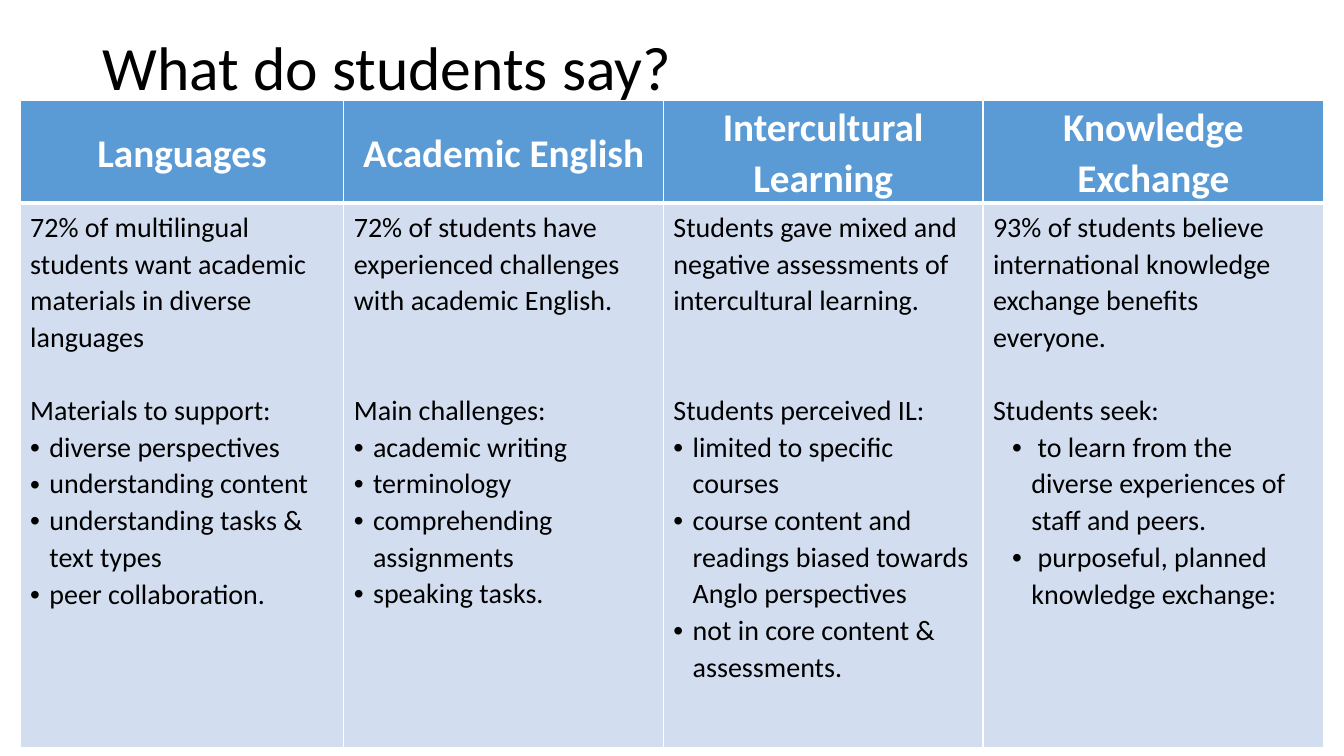
from lxml import etree
from pptx import Presentation
from pptx.dml.color import RGBColor
from pptx.enum.text import MSO_ANCHOR, MSO_AUTO_SIZE, PP_ALIGN
from pptx.oxml.ns import qn
from pptx.util import Inches, Pt

MIDDLE, TOP = MSO_ANCHOR.MIDDLE, MSO_ANCHOR.TOP
LEFT, CENTER = PP_ALIGN.LEFT, PP_ALIGN.CENTER
NO_AUTOFIT = MSO_AUTO_SIZE.NONE

FONT = "Calibri"
BLACK = RGBColor(0x00, 0x00, 0x00)
WHITE = RGBColor(0xFF, 0xFF, 0xFF)
HEADER_BLUE = RGBColor(0x5B, 0x9B, 0xD5)
BODY_BLUE = RGBColor(0xD2, 0xDE, 0xEF)

TITLE = "What do students say?"
# heading, width, finding, blank lines below it, lead-in, bullet indent, bullets
THEMES = [
    ("Languages", 3.21,
     "72% of multilingual students want academic materials in diverse languages", 1,
     "Materials to support:", 0.19,
     ["diverse perspectives", "understanding content",
      "understanding tasks & text types", "peer collaboration."]),
    ("Academic English", 3.17,
     "72% of students have experienced challenges with academic English.", 2,
     "Main challenges:", 0.19,
     ["academic writing", "terminology", "comprehending assignments", "speaking tasks."]),
    ("Intercultural Learning", 3.17,
     "Students gave mixed and negative assessments of intercultural learning.", 2,
     "Students perceived IL:", 0.19,
     ["limited to specific courses",
      "course content and readings biased towards Anglo perspectives",
      "not in core content & assessments."]),
    ("Knowledge Exchange", 3.38,
     "93% of students believe international knowledge exchange benefits everyone.", 1,
     "Students seek:", 0.38,
     [" to learn from the diverse experiences of staff and peers.",
      " purposeful, planned knowledge exchange:"]),
]
ROW_HEIGHTS = (0.97, 5.4)
HANGING = 0.19
LINE_SPACING = 1.07
LINE_HEIGHT = 26.1  # points taken by one 20 pt line


def add_run(paragraph, text, size, color, bold=False):
    run = paragraph.add_run()
    run.text = text
    run.font.name = FONT
    run.font.size = Pt(size)
    run.font.bold = bold
    run.font.color.rgb = color


def style_cell(cell, fill, bottom_width, anchor):
    """Give the cell white borders, then its fill, in the order the schema wants."""
    properties = cell._tc.get_or_add_tcPr()
    for side, width in (("L", 1), ("R", 1), ("T", 1), ("B", bottom_width)):
        border = etree.SubElement(properties, qn(f"a:ln{side}"), w=str(Pt(width)))
        solid = etree.SubElement(border, qn("a:solidFill"))
        etree.SubElement(solid, qn("a:srgbClr"), val=str(WHITE))
    cell.fill.solid()
    cell.fill.fore_color.rgb = fill
    cell.vertical_anchor = anchor


def set_bullet(paragraph, indent):
    properties = paragraph._p.get_or_add_pPr()
    properties.set("marL", str(Inches(indent)))
    properties.set("indent", str(-Inches(HANGING)))
    etree.SubElement(properties, qn("a:buFont"), typeface="Arial")
    etree.SubElement(properties, qn("a:buChar"), char="•")


def fill_header(cell, heading):
    style_cell(cell, HEADER_BLUE, 3, MIDDLE)
    cell.margin_left = cell.margin_right = Inches(0.01)
    cell.margin_top = cell.margin_bottom = 0
    paragraph = cell.text_frame.paragraphs[0]
    paragraph.alignment = CENTER
    paragraph.line_spacing = LINE_SPACING
    add_run(paragraph, heading, 28, WHITE, bold=True)


def fill_body(cell, finding, blank_lines, lead_in, indent, bullets):
    style_cell(cell, BODY_BLUE, 1, TOP)
    frame = cell.text_frame
    for index, text in enumerate([finding, lead_in, *bullets]):
        paragraph = frame.add_paragraph() if index else frame.paragraphs[0]
        paragraph.line_spacing = LINE_SPACING
        if index == 1:
            paragraph.space_before = Pt(blank_lines * LINE_HEIGHT)
        elif index > 1:
            set_bullet(paragraph, indent)
        add_run(paragraph, text, 20, BLACK)


def main():
    presentation = Presentation()
    presentation.slide_width, presentation.slide_height = Inches(13.33), Inches(7.5)
    slide = presentation.slides.add_slide(presentation.slide_layouts[5])

    title = slide.shapes.title
    title.left, title.top = Inches(0.92), Inches(0.13)
    title.width, title.height = Inches(11.5), Inches(1.14)
    title.text_frame.auto_size = NO_AUTOFIT
    title.text_frame.vertical_anchor = MIDDLE
    title_line = title.text_frame.paragraphs[0]
    title_line.alignment = LEFT
    title_line.line_spacing = 0.9
    add_run(title_line, TITLE, 44, BLACK)

    table_width = sum(width for _, width, *_ in THEMES)
    table = slide.shapes.add_table(
        len(ROW_HEIGHTS), len(THEMES), Inches(0.2), Inches(1),
        Inches(table_width), Inches(sum(ROW_HEIGHTS))).table
    for row, height in zip(table.rows, ROW_HEIGHTS):
        row.height = Inches(height)
    for column, (heading, width, *findings) in enumerate(THEMES):
        table.columns[column].width = Inches(width)
        fill_header(table.cell(0, column), heading)
        fill_body(table.cell(1, column), *findings)

    presentation.save("out.pptx")


if __name__ == "__main__":
    main()
